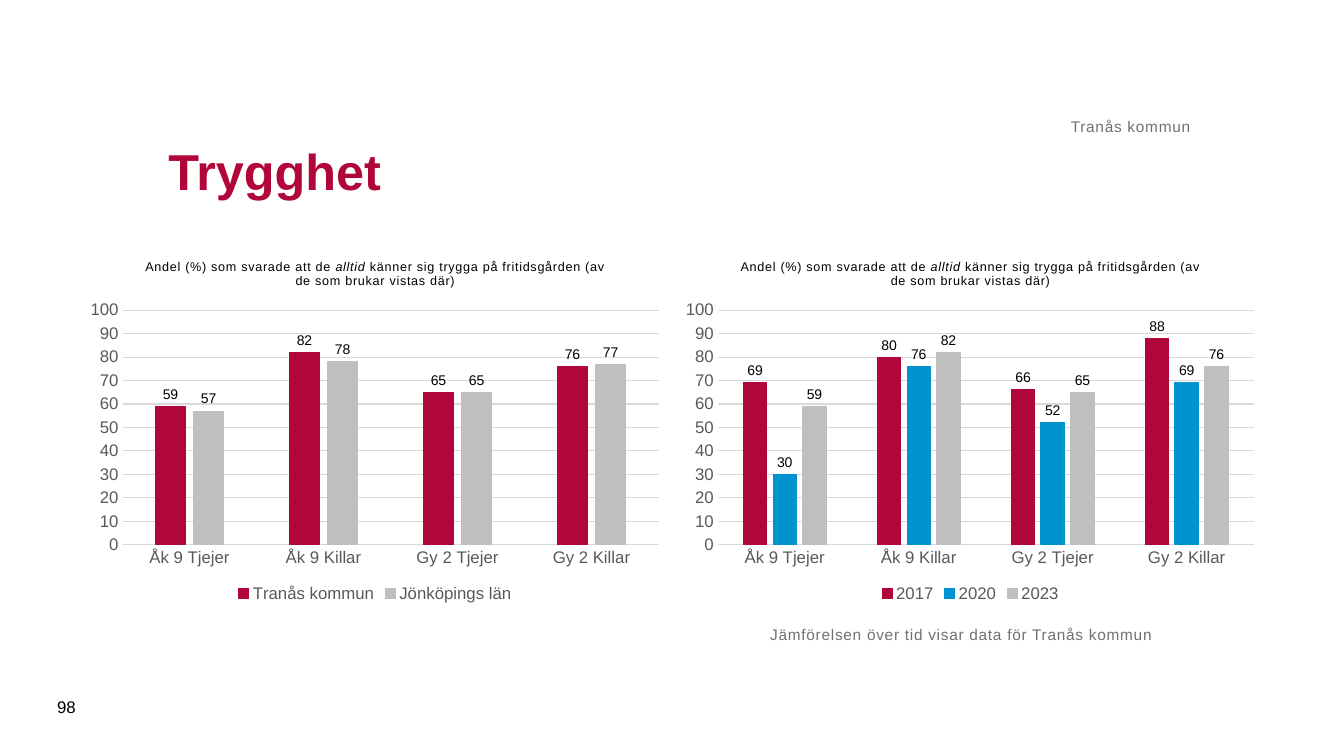
from lxml import etree
from pptx import Presentation
from pptx.chart.data import CategoryChartData
from pptx.dml.color import RGBColor
from pptx.enum.chart import XL_CHART_TYPE as ChartType
from pptx.enum.chart import XL_LABEL_POSITION as LabelPosition
from pptx.enum.chart import XL_LEGEND_POSITION as LegendPosition
from pptx.enum.chart import XL_TICK_MARK as TickMark
from pptx.enum.text import MSO_ANCHOR as Anchor
from pptx.enum.text import PP_ALIGN as Align
from pptx.oxml.ns import qn
from pptx.util import Cm, Pt

CRIMSON = RGBColor(0xB1, 0x06, 0x3A)
BLUE = RGBColor(0x00, 0x93, 0xD0)
SILVER = RGBColor(0xBF, 0xBF, 0xBF)
GRID = RGBColor(0xD9, 0xD9, 0xD9)
AXIS_GREY = RGBColor(0x59, 0x59, 0x59)
NOTE_GREY = RGBColor(0x71, 0x71, 0x71)
BLACK = RGBColor(0, 0, 0)

NUMBER_FORMAT = "#,##0;#,##0"
GROUPS = ["Åk 9 Tjejer", "Åk 9 Killar", "Gy 2 Tjejer", "Gy 2 Killar"]
QUESTION = [
    ("Andel (%) som svarade att de ", False),
    ("alltid", True),
    (" känner sig trygga på fritidsgården (av de som brukar vistas där)", False),
]
CHARTS = [
    [("Tranås kommun", (59, 82, 65, 76), CRIMSON),
     ("Jönköpings län", (57, 78, 65, 77), SILVER)],
    [("2017", (69, 80, 66, 88), CRIMSON),
     ("2020", (30, 76, 52, 69), BLUE),
     ("2023", (59, 82, 65, 76), SILVER)],
]


class SlideBuilder:
    font_name = "Arial"
    plot_area = {"x": 0.073, "y": 0.187, "w": 0.906, "h": 0.643}

    def __init__(self, presentation):
        self.slide = presentation.slides.add_slide(presentation.slide_layouts[5])

    def style(self, font, size, color, bold=False):
        font.name = self.font_name
        font.size = Pt(size)
        font.bold = bold
        font.color.rgb = color

    def space_letters(self, run):
        run._r.get_or_add_rPr().set("spc", "50")

    def title(self, text, left, top, width, height):
        shape = self.slide.shapes.title
        shape.left, shape.top, shape.width, shape.height = map(Cm, (left, top, width, height))
        frame = shape.text_frame
        frame.text = text
        frame.vertical_anchor = Anchor.MIDDLE
        paragraph = frame.paragraphs[0]
        paragraph.alignment = Align.LEFT
        self.style(paragraph.font, 36, CRIMSON, bold=True)

    def text(self, text, left, top, width, height, size=11, color=NOTE_GREY,
             anchor=Anchor.TOP, align=Align.LEFT, note=True):
        shape = self.slide.shapes.add_textbox(*map(Cm, (left, top, width, height)))
        frame = shape.text_frame
        frame.word_wrap = True
        frame.vertical_anchor = anchor
        paragraph = frame.paragraphs[0]
        paragraph.alignment = align
        run = paragraph.add_run()
        run.text = text
        if note:
            frame.margin_left = frame.margin_right = 0
            frame.margin_top = frame.margin_bottom = 0
            self.space_letters(run)
        self.style(paragraph.font, size, color)

    def chart(self, series_list, left, top, width, height):
        data = CategoryChartData(number_format=NUMBER_FORMAT)
        data.categories = GROUPS
        for name, values, _ in series_list:
            data.add_series(name, values)
        frame = self.slide.shapes.add_chart(
            ChartType.COLUMN_CLUSTERED, *map(Cm, (left, top, width, height)), data)
        chart = frame.chart
        self.style(chart.font, 10, BLACK)
        self.chart_title(chart)
        self.chart_axes(chart)
        self.chart_series(chart, [color for _, _, color in series_list])
        self.chart_layout(chart)
        chart.has_legend = True
        chart.legend.position = LegendPosition.BOTTOM
        chart.legend.include_in_layout = False
        self.style(chart.legend.font, 12, AXIS_GREY)

    def chart_title(self, chart):
        chart.has_title = True
        chart.chart_title.include_in_layout = False
        paragraph = chart.chart_title.text_frame.paragraphs[0]
        for text, italic in QUESTION:
            run = paragraph.add_run()
            run.text = text
            self.style(run.font, 9, BLACK)
            run.font.italic = italic
            self.space_letters(run)

    def chart_axes(self, chart):
        for axis in (chart.category_axis, chart.value_axis):
            axis.major_tick_mark = axis.minor_tick_mark = TickMark.NONE
            self.style(axis.tick_labels.font, 12, AXIS_GREY)
        value_axis = chart.value_axis
        value_axis.minimum_scale = 0
        value_axis.maximum_scale = 100
        value_axis.major_unit = 10
        value_axis.tick_labels.number_format = NUMBER_FORMAT
        value_axis.tick_labels.number_format_is_linked = False
        value_axis.format.line.fill.background()
        for line in (chart.category_axis.format.line, value_axis.major_gridlines.format.line):
            line.color.rgb = GRID
            line.width = Pt(0.75)

    def chart_series(self, chart, colors):
        plot = chart.plots[0]
        plot.gap_width = 219
        plot.overlap = -27
        plot.vary_by_categories = False
        for series, color in zip(plot.series, colors):
            series.format.fill.solid()
            series.format.fill.fore_color.rgb = color
            series.format.line.color.rgb = color
            series.format.line.width = Pt(0.75)
            labels = series.data_labels
            labels.show_value = True
            labels.position = LabelPosition.OUTSIDE_END
            labels.number_format = NUMBER_FORMAT
            labels.number_format_is_linked = False
            self.style(labels.font, 10, BLACK)

    def chart_layout(self, chart):
        plot_area = chart._chartSpace.chart.plotArea
        for old in plot_area.findall(qn("c:layout")):
            plot_area.remove(old)
        layout = etree.Element(qn("c:layout"))
        manual = etree.SubElement(layout, qn("c:manualLayout"))
        settings = {"layoutTarget": "inner", "xMode": "edge", "yMode": "edge", **self.plot_area}
        for tag, value in settings.items():
            etree.SubElement(manual, qn(f"c:{tag}")).set("val", str(value))
        plot_area.insert(0, layout)


def main():
    presentation = Presentation()
    presentation.slide_width = Cm(33.87)
    presentation.slide_height = Cm(19.05)
    builder = SlideBuilder(presentation)
    builder.title("Trygghet", 3.99, 2.49, 26.01, 3.61)
    for index, series_list in enumerate(CHARTS):
        builder.chart(series_list, 2 + index * 15, 6.1, 14.91, 9.19)
    builder.text("Jämförelsen över tid visar data för Tranås kommun", 19.41, 15.75, 13.49, 2.39)
    builder.text("Tranås kommun", 3.99, 1.57, 26.01, 1.85, anchor=Anchor.BOTTOM, align=Align.RIGHT)
    builder.text("98", 1.19, 17.3, 1.45, 1.02, size=12, color=BLACK, anchor=Anchor.MIDDLE, note=False)
    presentation.save("out.pptx")


if __name__ == "__main__":
    main()
